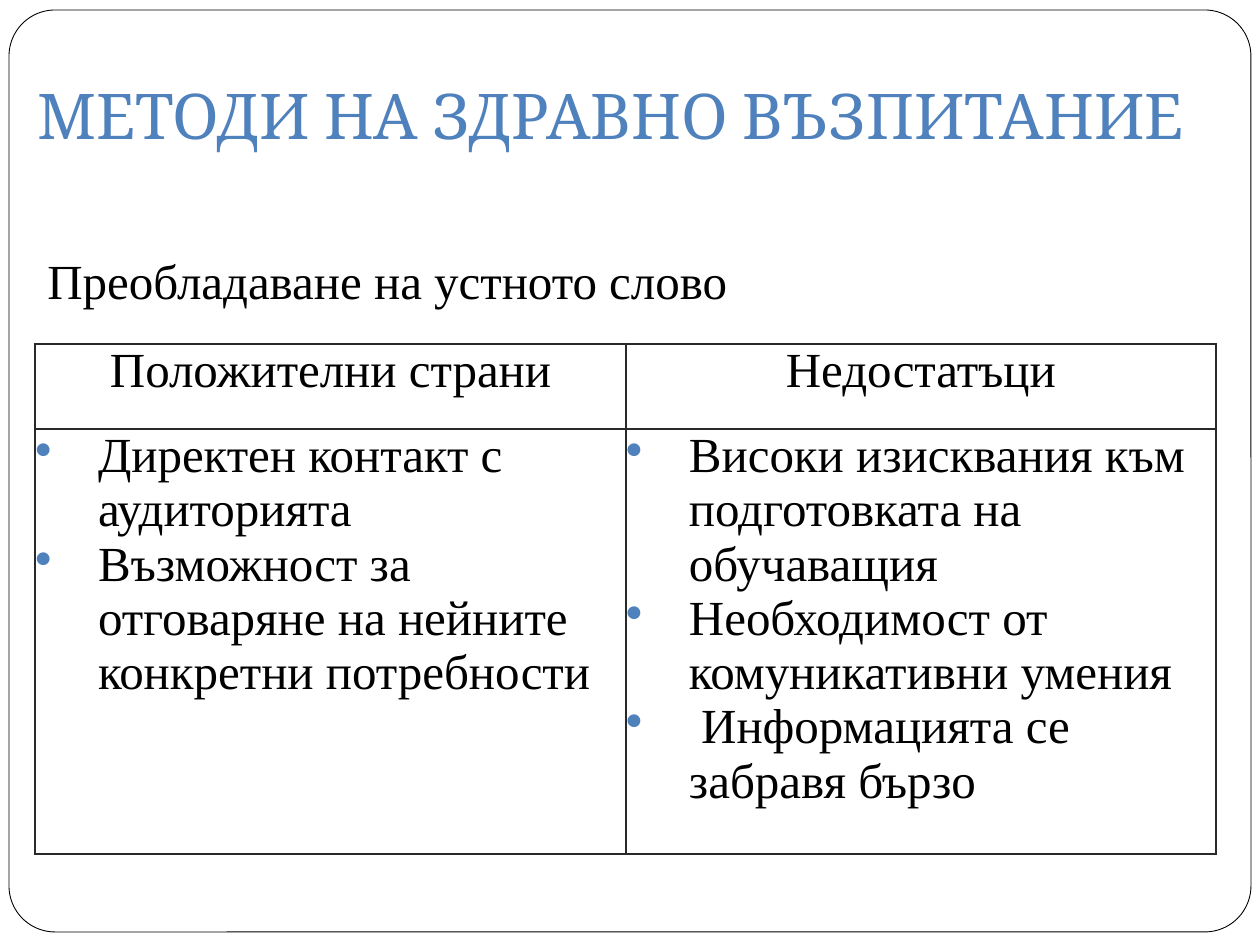
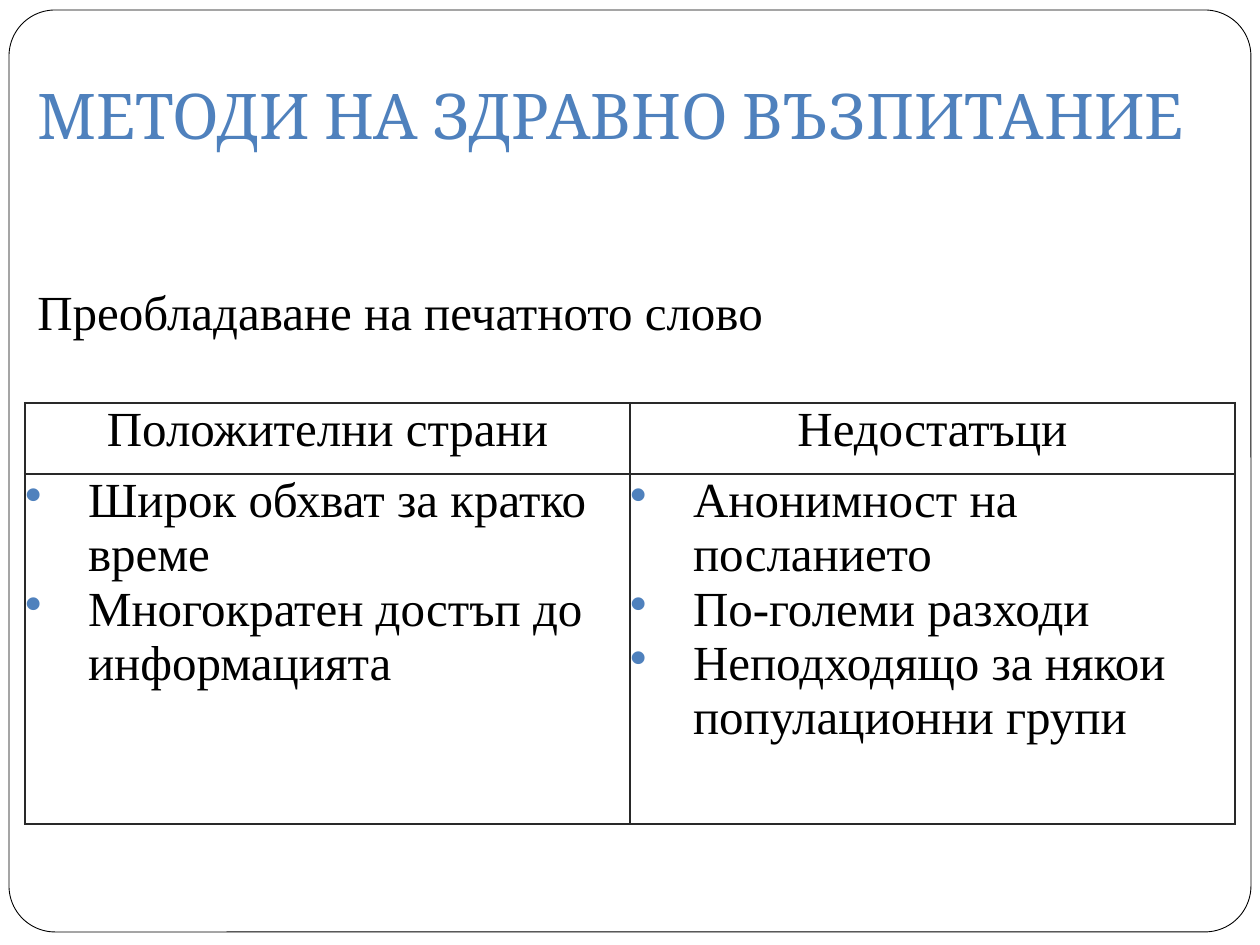
from lxml import etree
from pptx import Presentation
from pptx.dml.color import RGBColor
from pptx.enum.shapes import MSO_SHAPE
from pptx.enum.text import MSO_ANCHOR, PP_ALIGN
from pptx.oxml.ns import qn
from pptx.util import Emu, Pt

ROUND = MSO_SHAPE.ROUNDED_RECTANGLE
TOP, BOTTOM = MSO_ANCHOR.TOP, MSO_ANCHOR.BOTTOM
LEFT, CENTER = PP_ALIGN.LEFT, PP_ALIGN.CENTER

TITLE = "МЕТОДИ НА ЗДРАВНО ВЪЗПИТАНИЕ"
HEADS = ("Положителни страни", "Недостатъци")
SLIDES = [
    {
        "topic": "Преобладаване на устното слово",
        "box": (35, 244, 922, 72),
        "table": (35, 344),
        "cols": (591, 590),
        "rows": (85, 425),
        "points": (
            ("Директен контакт с аудиторията",
             "Възможност за отговаряне на нейните конкретни потребности"),
            ("Високи изисквания към подготовката на обучаващия",
             "Необходимост от комуникативни умения",
             " Информацията се забравя бързо"),
        ),
    },
    {
        "topic": "Преобладаване на печатното слово",
        "box": (25, 275, 903, 72),
        "table": (25, 403),
        "cols": (605, 605),
        "rows": (71, 350),
        "points": (
            ("Широк обхват за кратко време",
             "Многократен достъп до информацията"),
            ("Анонимност на посланието",
             "По-големи разходи",
             "Неподходящо за някои популационни групи"),
        ),
    },
]

COLORS = {"paper": "FFFFFF", "ink": "000000", "accent": "4F81BD", "rule": "292929"}
HEAD = {"name": "Cambria", "size": Pt(36), "bold": False}
BODY = {"name": "Times New Roman", "size": Pt(28), "bold": False}
PAGE = (1260, 945)
FRAME = (9, 10, 1242, 922)
BANNER = (25, 38, 1235, 127)
INDENT = 63
THICK, THIN = Pt(1.5), Pt(0.75)


def px(n):
    return Emu(round(n * 914400 / 126))


def place(box):
    return [px(n) for n in box]


def color(key):
    return RGBColor.from_string(COLORS[key])


def paint(shape, key):
    shape.fill.solid()
    shape.fill.fore_color.rgb = color(key)


def write(para, text, style, key="ink", align=LEFT):
    para.alignment = align
    run = para.add_run()
    run.text = text
    for name, value in style.items():
        setattr(run.font, name, value)
    run.font.color.rgb = color(key)


def add_text(slide, box, text, style, key="ink", anchor=TOP, foot=6):
    frame = slide.shapes.add_textbox(*place(box)).text_frame
    form = {"word_wrap": True, "vertical_anchor": anchor, "margin_bottom": px(foot)}
    for name, value in form.items():
        setattr(frame, name, value)
    write(frame.paragraphs[0], text, style, key)


def add_frame(slide):
    shape = slide.shapes.add_shape(ROUND, *place(FRAME))
    shape.adjustments[0] = 0.05
    shape.shadow.inherit = False
    paint(shape, "paper")
    shape.line.color.rgb = color("ink")
    shape.line.width = Pt(0.5)


def add_color(node, key):
    fill = etree.SubElement(node, qn("a:solidFill"))
    etree.SubElement(fill, qn("a:srgbClr"), val=COLORS[key])


def add_bullet(para):
    props = para._p.get_or_add_pPr()
    props.set("marL", str(px(INDENT)))
    props.set("indent", str(-px(INDENT)))
    tint = etree.SubElement(props, qn("a:buClr"))
    etree.SubElement(tint, qn("a:srgbClr"), val=COLORS["accent"])
    etree.SubElement(props, qn("a:buChar"), char="•")


def add_rules(cell, row, col):
    outer = {"L": col == 0, "R": col == 1, "T": row == 0, "B": row == 1}
    props = cell._tc.get_or_add_tcPr()
    for spot, (side, edge) in enumerate(outer.items()):
        line = etree.Element(qn("a:ln" + side), w=str(THICK if edge else THIN))
        add_color(line, "rule")
        props.insert(spot, line)


def fill_cell(cell, row, col, lines):
    for side in ("left", "top", "right", "bottom"):
        setattr(cell, "margin_" + side, 0)
    paint(cell, "paper")
    add_rules(cell, row, col)
    frame = cell.text_frame
    for spot, text in enumerate(lines):
        para = frame.add_paragraph() if spot else frame.paragraphs[0]
        write(para, text, BODY, align=LEFT if row else CENTER)
        if row:
            add_bullet(para)


def add_grid(slide, data):
    cols, rows = data["cols"], data["rows"]
    box = (*data["table"], sum(cols), sum(rows))
    table = slide.shapes.add_table(len(rows), len(cols), *place(box)).table
    table.first_row = table.horz_banding = False
    for col, width in zip(table.columns, cols):
        col.width = px(width)
    for row, height in zip(table.rows, rows):
        row.height = px(height)
    for col, (head, points) in enumerate(zip(HEADS, data["points"])):
        for row, lines in enumerate(((head,), points)):
            fill_cell(table.cell(row, col), row, col, lines)


def main():
    deck = Presentation()
    deck.slide_width, deck.slide_height = place(PAGE)
    for data in SLIDES:
        slide = deck.slides.add_slide(deck.slide_layouts[6])
        paint(slide.background, "paper")
        add_frame(slide)
        add_text(slide, BANNER, TITLE, HEAD, "accent", BOTTOM, 13)
        add_grid(slide, data)
        add_text(slide, data["box"], data["topic"], BODY)
    deck.save("out.pptx")


if __name__ == "__main__":
    main()
